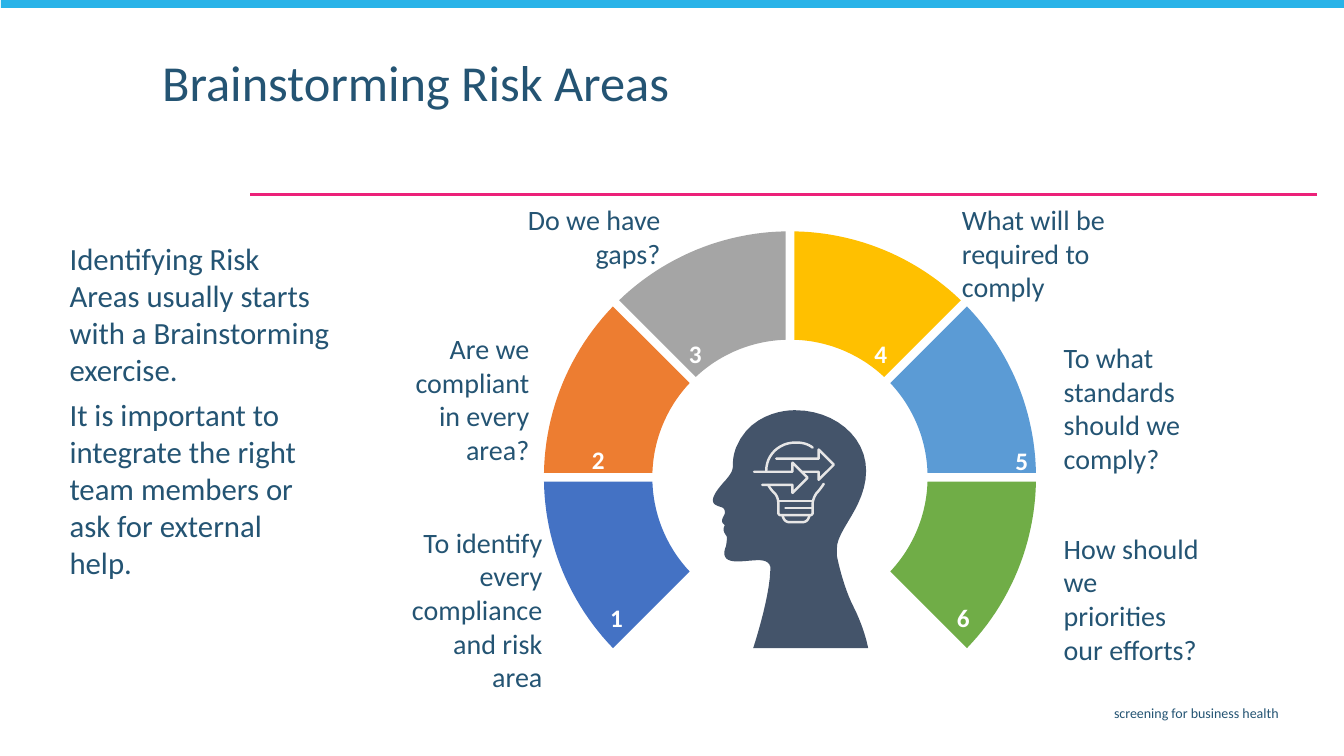
from math import asin, cos, radians, sin

from lxml.etree import SubElement as Sub
from pptx import Presentation
from pptx.dml.color import RGBColor as Rgb
from pptx.enum.shapes import MSO_CONNECTOR as Link, MSO_SHAPE as Shape
from pptx.enum.text import MSO_ANCHOR as Anchor, PP_ALIGN as Align
from pptx.oxml.ns import qn
from pptx.util import Inches, Pt

HUES = {
    "ink": "245473", "pink": "EC2179", "sky": "29B3E8", "white": "FFFFFF",
    "blue": "4472C4", "orange": "ED7D31", "grey": "A5A5A5",
    "gold": "FFC000", "azure": "5B9BD5", "green": "70AD47",
    "slate": "44546A", "pale": "E7E6E6",
}
MID_X, MID_Y = 7.835, 4.735
OUTER, INNER, GAP = 2.44, 1.365, 0.043

BODY = [
    "Identifying Risk Areas usually starts with a Brainstorming exercise.",
    "It is important to integrate the right team members or ask for external help.",
]
PARTS = [
    ("blue", (5.95, 5.93), (3.98, 5.19, 1.44, 1.72),
     "To identify every compliance and risk area"),
    ("orange", (5.77, 4.36), (3.85, 3.27, 1.44, 1.38),
     "Are we compliant in every area?"),
    ("grey", (6.73, 3.31), (4.9, 1.99, 1.69, 0.71), "Do we have gaps?"),
    ("gold", (8.57, 3.31), (9.5, 1.99, 1.69, 1.05),
     "What will be required to comply"),
    ("azure", (9.97, 4.37), (10.51, 3.36, 1.44, 1.38),
     "To what standards should we comply?"),
    ("green", (9.39, 5.93), (10.51, 5.25, 1.44, 1.38),
     "How should we priorities our efforts?"),
]
HEAD = [
    (8.3, 5.51), (8.3, 5.49, 8.3, 5.47, 8.3, 5.45),
    (8.29, 5.26, 8.59, 5.03, 8.59, 4.67), (8.59, 4.32, 8.26, 4.07, 7.89, 4.07),
    (7.89, 4.07, 7.46, 4.05, 7.3, 4.44), (7.23, 4.64, 7.32, 4.62, 7.2, 4.76),
    (7.07, 4.9, 7.04, 4.98, 7.1, 5.01), (7.15, 5.04, 7.19, 5.02, 7.19, 5.09),
    (7.18, 5.13, 7.13, 5.17, 7.19, 5.21), (7.15, 5.27, 7.21, 5.31, 7.21, 5.33),
    (7.21, 5.33, 7.21, 5.37, 7.2, 5.42), (7.18, 5.47, 7.15, 5.57, 7.31, 5.57),
    (7.46, 5.57, 7.61, 5.52, 7.64, 5.62), (7.64, 5.63, 7.64, 5.65, 7.64, 5.66),
    (7.63, 5.95, 7.47, 6.43, 7.47, 6.43), (8.61, 6.43),
    (8.61, 6.43, 8.58, 6.25, 8.47, 6.03), (8.36, 5.82, 8.3, 5.52, 8.3, 5.51),
]
BULB = [
    [(7.6, 4.67), (7.6, 4.51, 7.73, 4.39, 7.89, 4.39),
     (7.95, 4.39, 8.01, 4.4, 8.06, 4.44)],
    [(7.48, 4.68), (7.86, 4.68), (7.86, 4.59), (8.01, 4.74), (7.86, 4.89),
     (7.86, 4.81), (7.56, 4.81)],
    [(7.7, 4.55), (8.12, 4.55), (8.12, 4.46), (8.27, 4.61), (8.12, 4.76),
     (8.12, 4.68), (7.96, 4.68)],
    [(7.62, 4.81), (7.64, 4.85, 7.66, 4.87, 7.68, 4.89),
     (7.71, 4.92, 7.72, 4.96, 7.72, 5), (7.72, 5.09),
     (7.72, 5.1, 7.73, 5.11, 7.74, 5.11), (8.04, 5.11),
     (8.05, 5.11, 8.06, 5.1, 8.06, 5.09), (8.06, 5),
     (8.06, 4.96, 8.08, 4.92, 8.1, 4.89), (8.13, 4.86, 8.15, 4.83, 8.17, 4.8)],
    [(7.73, 4.97), (8.06, 4.97)],
    [(7.79, 5.04), (8.06, 5.04)],
    [(7.76, 5.11), (7.77, 5.15, 7.79, 5.18, 7.83, 5.18), (7.96, 5.18),
     (8, 5.18, 8.02, 5.15, 8.03, 5.11)],
]


def tint(name):
    return Rgb.from_string(HUES[name])


def apply(item, form):
    for key, value in form.items():
        setattr(item, key, value)


def paint(shape, hue):
    shape.shadow.inherit = False
    shape.fill.solid()
    shape.fill.fore_color.rgb = tint(hue)
    shape.line.fill.background()


def write(slide, box, lines, size, hue="ink", bold=False, pad=(0.1, 0.05),
          frame=None, para=None):
    text = slide.shapes.add_textbox(*map(Inches, box)).text_frame
    wide, high = map(Inches, pad)
    apply(text, {"word_wrap": True, "margin_left": wide, "margin_right": wide,
                 "margin_top": high, "margin_bottom": high, **(frame or {})})
    for num, line in enumerate(lines):
        part = text.add_paragraph() if num else text.paragraphs[0]
        part.text = line
        apply(part, para or {})
        if num:
            part.space_before = Pt(6)
        apply(part.font, {"name": "Calibri", "size": Pt(size), "bold": bold})
        part.font.color.rgb = tint(hue)


def trace(steps, cuts=12):
    points = [steps[0]]
    for step in steps[1:]:
        if len(step) == 2:
            points.append(step)
            continue
        knots = [points[-1], step[:2], step[2:4], step[4:]]
        for cut in range(1, cuts + 1):
            t = cut / cuts
            loads = [(1 - t) ** 3, 3 * t * (1 - t) ** 2, 3 * t * t * (1 - t), t ** 3]
            points.append(tuple(sum(w * k[axis] for w, k in zip(loads, knots))
                                for axis in (0, 1)))
    return points


def outline(slide, paths, close=True):
    paths = [[(Inches(x), Inches(y)) for x, y in path] for path in paths]
    maker = slide.shapes.build_freeform(*paths[0][0], scale=1.0)
    for num, path in enumerate(paths):
        if num:
            maker.move_to(*path[0])
        maker.add_line_segments(path[1:], close=close)
    return maker.convert_to_shape()


def arc(radius, first, last, cuts=24):
    trim = asin(GAP / radius)
    start, end = radians(first) + trim, radians(last) - trim
    turns = [start + (end - start) * cut / cuts for cut in range(cuts + 1)]
    return [(MID_X + radius * cos(a), MID_Y + radius * sin(a)) for a in turns]


def wedge(slide, first, hue):
    last = first + 45
    ring = arc(OUTER, first, last) + arc(INNER, first, last)[::-1]
    paint(outline(slide, [ring]), hue)


def sketch(slide):
    bulb = outline(slide, [trace(path) for path in BULB], close=False)
    bulb.shadow.inherit = False
    bulb.fill.background()
    bulb.line.color.rgb = tint("pale")
    bulb.line.width = Pt(1.75)
    bulb.line._get_or_add_ln().set("cap", "rnd")


def rule(slide):
    line = slide.shapes.add_connector(
        Link.STRAIGHT, *map(Inches, (13.06, 1.93, 2.48, 1.93)))
    line.line.color.rgb = tint("pink")
    line.line.width = Pt(1.5)
    Sub(line._element.spPr, qn("a:effectLst"))


def main():
    deck = Presentation()
    apply(deck, {"slide_width": Inches(13.33), "slide_height": Inches(7.5)})
    slide = deck.slides.add_slide(deck.slide_layouts[6])
    rule(slide)
    band = slide.shapes.add_shape(
        Shape.RECTANGLE, *map(Inches, (0.01, -0.02, 13.34, 0.1)))
    paint(band, "sky")
    write(slide, (3.65, 6.94, 9.13, 0.29), ["screening for business health"], 10,
          para={"alignment": Align.RIGHT})
    write(slide, (1.51, 0.53, 9.68, 0.76), ["Brainstorming Risk Areas"], 36,
          para={"line_spacing": 0.9})
    write(slide, (0.6, 2.34, 2.76, 3.14), BODY, 22, pad=(0.09, 0.04))
    for num, (hue, _, _, _) in enumerate(PARTS):
        wedge(slide, 135 + 45 * num, hue)
    paint(outline(slide, [trace(HEAD)]), "slate")
    sketch(slide)
    for num, (_, spot, box, label) in enumerate(PARTS, 1):
        write(slide, (*spot, 0.33, 0.4), [str(num)], 18, "white", True,
              frame={"word_wrap": False, "vertical_anchor": Anchor.MIDDLE},
              para={"alignment": Align.CENTER})
        side = Align.RIGHT if num <= 3 else Align.LEFT
        write(slide, box, [label], 20, pad=(0.04, 0.02), para={"alignment": side})
    deck.save("out.pptx")


if __name__ == "__main__":
    main()
